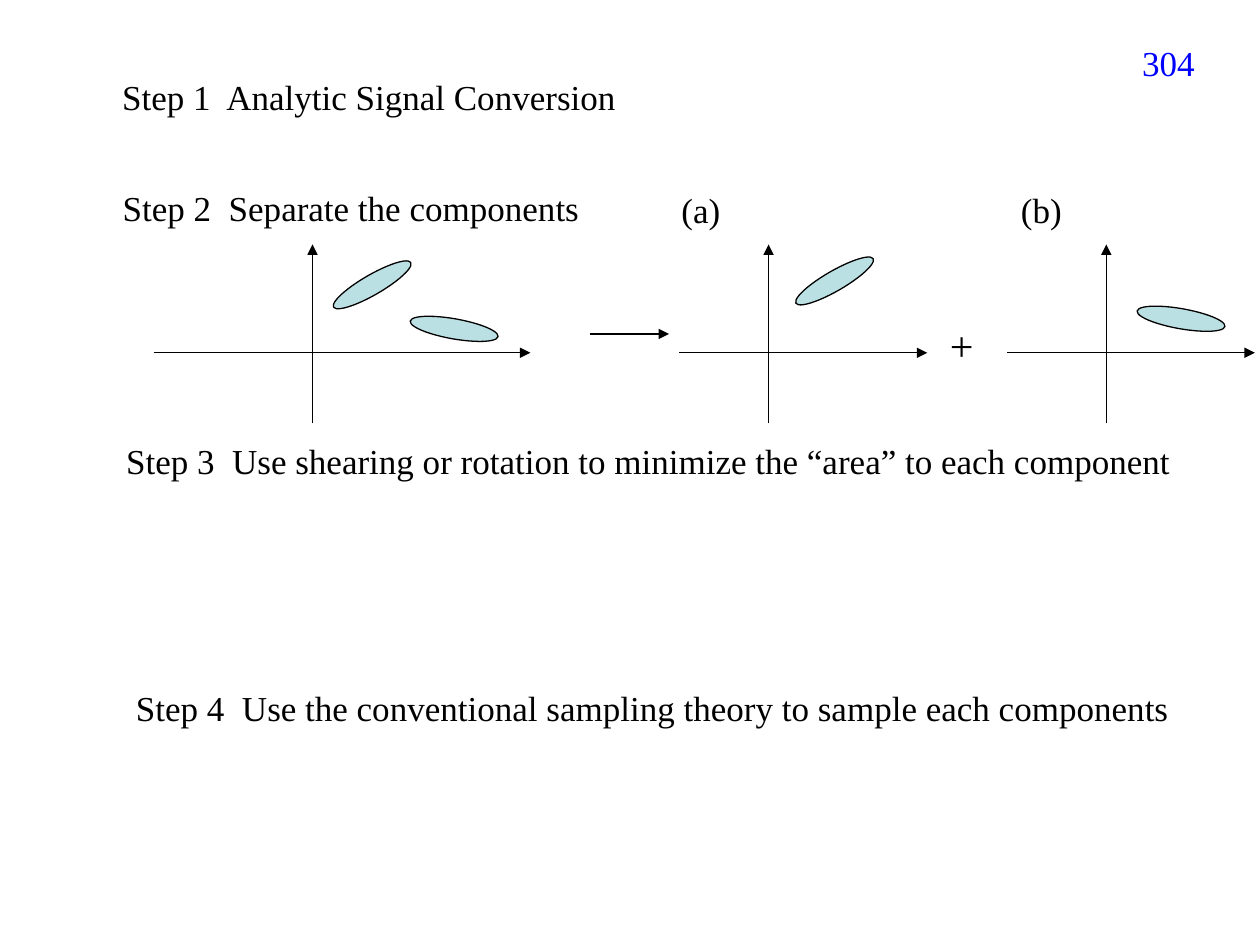
from collections import namedtuple
from dataclasses import dataclass

from pptx import Presentation
from pptx.dml.color import RGBColor
from pptx.enum.shapes import MSO_CONNECTOR, MSO_SHAPE
from pptx.enum.text import MSO_ANCHOR, MSO_AUTO_SIZE, PP_ALIGN
from pptx.oxml.ns import qn
from pptx.util import Pt
from lxml import etree

STRAIGHT = MSO_CONNECTOR.STRAIGHT
ELLIPSE = MSO_SHAPE.OVAL
TOP = MSO_ANCHOR.TOP
NO_FIT = MSO_AUTO_SIZE.NONE
LEFT, RIGHT = PP_ALIGN.LEFT, PP_ALIGN.RIGHT

Box = namedtuple("Box", "left top width height")


@dataclass(frozen=True)
class Theme:
    font: str = "Times New Roman"
    ink: RGBColor = RGBColor(0x00, 0x00, 0x00)
    number: RGBColor = RGBColor(0x00, 0x00, 0xFF)
    component: RGBColor = RGBColor(0xBB, 0xE0, 0xE3)
    text_size: float = 20
    plus_size: float = 24
    line_width: float = 0.75


THEME = Theme()
COMPONENT_SIZE = (51, 11.5)
STEEP, FLAT = 330, 10  # rotation of the two signal components

STEPS = [
    ("Step 1  Analytic Signal Conversion", Box(62.6, 39.6, 420, 31)),
    ("Step 2  Separate the components", Box(63, 103, 420, 31)),
    ("Step 3  Use shearing or rotation to minimize the “area” to each component",
     Box(65, 247.5, 623.5, 31)),
    ("Step 4  Use the conventional sampling theory to sample each components",
     Box(70.6, 389, 623.5, 31)),
]

# Each plot: box, offset of the vertical axis, components as (x, y, rotation)
PLOTS = [
    (Box(87.8, 139.7, 215.3, 102.2), 90.8, [(99.4, 17.3, STEEP), (146.2, 42.5, FLAT)]),
    (Box(388.1, 139.7, 141.8, 102.2), 51.1, [(63.3, 15.1, STEEP)]),
    (Box(575.3, 139.7, 141.8, 102.2), 56.9, [(74.1, 36.7, FLAT)]),
]
AXIS_HEIGHT = 61.9  # horizontal axis below the top of each plot

LABELS = [
    ("(a)", Box(382.3, 104.4, 60, 31), THEME.text_size),
    ("(b)", Box(576.3, 104.4, 60, 31), THEME.text_size),
    ("+", Box(535.7, 179.3, 62.6, 36), THEME.plus_size),
]


def write(shape, words, size=THEME.text_size, color=THEME.ink, align=LEFT):
    """Put one formatted line into a text box or placeholder."""
    frame = shape.text_frame
    frame.text = words
    for name, value in {"word_wrap": True, "auto_size": NO_FIT,
                        "vertical_anchor": TOP}.items():
        setattr(frame, name, value)
    para = frame.paragraphs[0]
    para.alignment = align
    span = para.runs[0]
    for name, value in {"name": THEME.font, "size": Pt(size), "bold": False}.items():
        setattr(span.font, name, value)
    span.font.color.rgb = color


def add_text(page, box, words, **style):
    write(page.shapes.add_textbox(*map(Pt, box)), words, **style)


def add_arrow(page, start, end):
    arrow = page.shapes.add_connector(STRAIGHT, *map(Pt, (*start, *end)))
    arrow.line.color.rgb = THEME.ink
    arrow.line.width = Pt(THEME.line_width)
    etree.SubElement(arrow.line._get_or_add_ln(), qn("a:tailEnd"), type="triangle")
    etree.SubElement(arrow._element.spPr, qn("a:effectLst"))


def add_component(page, left, top, rotation):
    blob = page.shapes.add_shape(ELLIPSE, *map(Pt, (left, top, *COMPONENT_SIZE)))
    blob.rotation = rotation
    blob.shadow.inherit = False
    blob.fill.solid()
    blob.fill.fore_color.rgb = THEME.component
    blob.line.color.rgb = THEME.ink
    blob.line.width = Pt(THEME.line_width)


def add_plot(page, box, origin, components):
    """Draw a pair of axes and the components between them."""
    axis_x, axis_y = box.left + origin, box.top + AXIS_HEIGHT
    add_arrow(page, (box.left, axis_y), (box.left + box.width, axis_y))
    add_arrow(page, (axis_x, box.top + box.height), (axis_x, box.top))
    for x, y, rotation in components:
        add_component(page, box.left + x, box.top + y, rotation)


def add_title(page, box, words):
    title = page.shapes.title
    for name, value in box._asdict().items():
        setattr(title, name, Pt(value))
    write(title, words)


def build_page(page):
    # Steps: the first is the title
    (first, first_box), *others = STEPS
    add_title(page, first_box, first)
    for words, box in others:
        add_text(page, box, words)

    # Page number
    add_text(page, Box(626.4, 20.2, 63.4, 37.4), "304", color=THEME.number, align=RIGHT)

    # Separation: mixed signal, arrow, then its two parts
    for box, origin, components in PLOTS:
        add_plot(page, box, origin, components)
    add_arrow(page, (337, 190.8), (382.3, 190.8))
    for words, box, size in LABELS:
        add_text(page, box, words, size=size)


def main():
    deck = Presentation()
    deck.slide_width, deck.slide_height = Pt(720), Pt(540)
    title_only = deck.slide_layouts[5]
    build_page(deck.slides.add_slide(title_only))
    deck.save("out.pptx")


if __name__ == "__main__":
    main()
